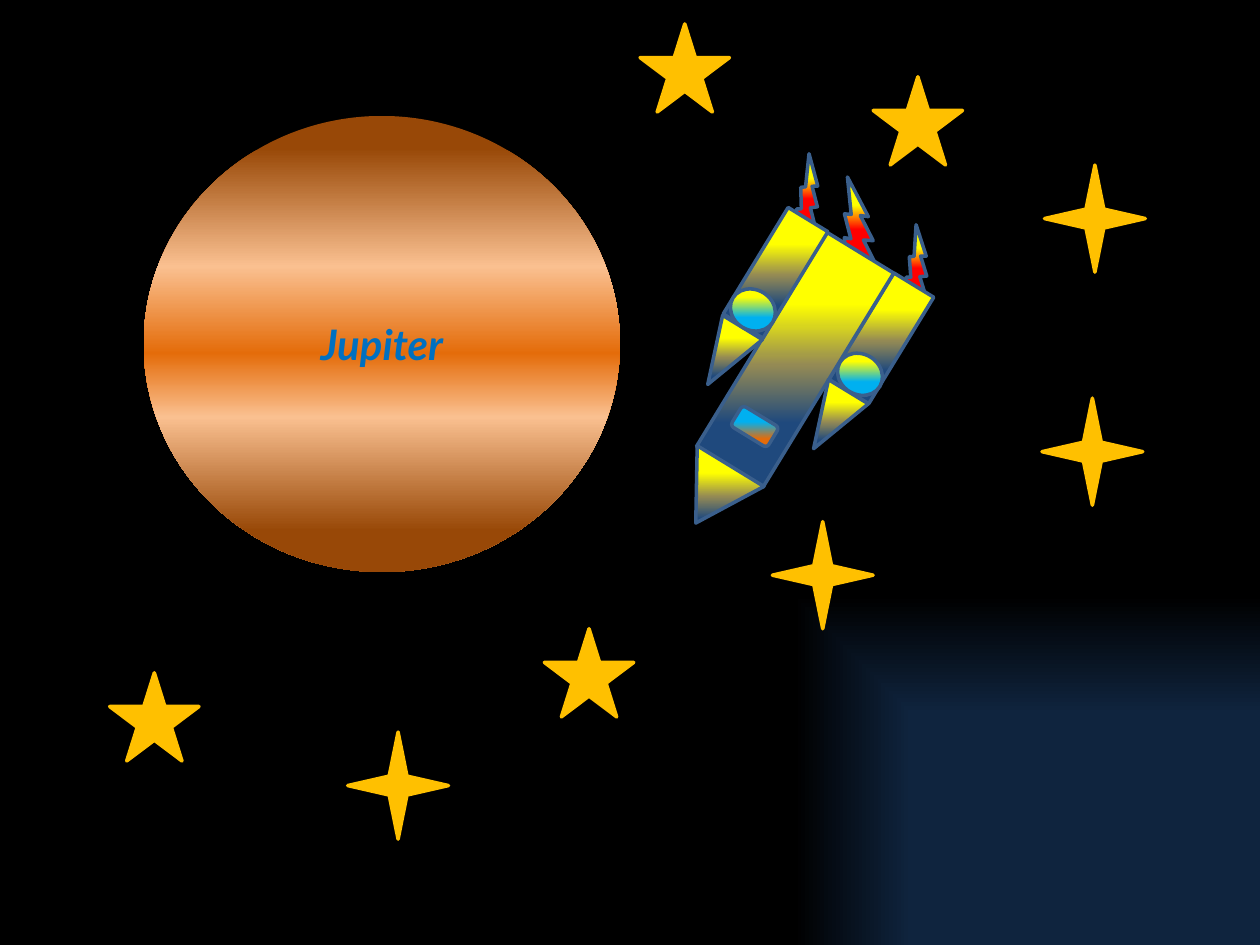
from dataclasses import dataclass
from typing import Any, NamedTuple

from lxml import etree
from pptx import Presentation
from pptx.dml.color import RGBColor
from pptx.enum.shapes import MSO_SHAPE
from pptx.enum.text import MSO_ANCHOR, PP_ALIGN
from pptx.oxml.ns import qn
from pptx.util import Inches, Pt

BOLT = MSO_SHAPE.LIGHTNING_BOLT
RECTANGLE = MSO_SHAPE.RECTANGLE
TRIANGLE = MSO_SHAPE.ISOSCELES_TRIANGLE
ROUNDED = MSO_SHAPE.ROUNDED_RECTANGLE
ELLIPSE = MSO_SHAPE.OVAL
STAR_5 = MSO_SHAPE.STAR_5_POINT
STAR_4 = MSO_SHAPE.STAR_4_POINT
MIDDLE = MSO_ANCHOR.MIDDLE
CENTER = PP_ALIGN.CENTER

Stops = tuple[tuple[int, str], ...]


@dataclass(frozen=True)
class Theme:
    font: str = "Lato"
    label_size: int = 24
    label: str = "0070C0"
    star: str = "FFC000"
    outline: str = "3A5F8C"
    line_width: int = 2
    sky: Stops = ((49, "0F243E"), (74, "000000"))
    planet: Stops = ((7, "984807"), (33, "FAC090"), (52, "E46C0A"),
                     (66, "FAC090"), (91, "984807"))
    flame: Stops = ((28, "FFFF00"), (52, "FF0000"))
    hull: Stops = ((28, "FFFF00"), (52, "948A54"), (75, "1F497D"))
    window: Stops = ((39, "00B0F0"), (79, "E46C0A"))
    porthole: Stops = ((28, "FFFF00"), (63, "00B0F0"))


class Part(NamedTuple):
    kind: Any
    left: float
    top: float
    width: float
    height: float
    fill: Stops | str


THEME = Theme()
ROCKET_ANGLE = 211.4

PLANET = Part(ELLIPSE, 1.14, 0.92, 3.78, 3.62, THEME.planet)

# Rocket from back to front: flames, bodies, noses, windows
ROCKET = (
    Part(BOLT, 6.24, 1.27, 0.36, 0.59, THEME.flame),
    Part(BOLT, 6.53, 1.51, 0.57, 0.59, THEME.flame),
    Part(BOLT, 7.1, 1.84, 0.37, 0.55, THEME.flame),
    Part(RECTANGLE, 6.81, 2.19, 0.37, 0.99, THEME.hull),
    Part(RECTANGLE, 6, 1.86, 0.62, 1.99, THEME.hull),
    Part(RECTANGLE, 5.97, 1.67, 0.37, 0.99, THEME.hull),
    Part(TRIANGLE, 5.35, 3.66, 0.62, 0.53, THEME.hull),
    Part(TRIANGLE, 6.41, 3.07, 0.37, 0.53, THEME.hull),
    Part(TRIANGLE, 5.57, 2.56, 0.37, 0.53, THEME.hull),
    Part(ROUNDED, 5.82, 3.29, 0.34, 0.19, THEME.window),
    Part(ELLIPSE, 5.79, 2.3, 0.37, 0.32, THEME.porthole),
    Part(ELLIPSE, 6.64, 2.81, 0.37, 0.32, THEME.porthole),
)

# Each star kind has one size and several places
STARS = (
    (STAR_5, 0.71, 0.7, ((6.93, 0.61), (4.32, 4.99), (0.87, 5.34), (5.08, 0.19))),
    (STAR_4, 0.8, 0.85, ((2.76, 5.81), (8.29, 1.31), (6.13, 4.14), (8.27, 3.16))),
)


def set_gradient(fill: Any, owner: Any, stops: Stops, to_corner: bool = False) -> None:
    """Fill with stops from top to bottom of the page, or out from the lower right corner."""
    fill.gradient()
    gradient = owner.find(".//" + qn("a:gradFill"))
    for child in list(gradient):
        gradient.remove(child)
    gradient.set("rotWithShape", "0")
    stop_list = etree.SubElement(gradient, qn("a:gsLst"))
    for position, color in stops:
        stop = etree.SubElement(stop_list, qn("a:gs"), pos=str(position * 1000))
        etree.SubElement(stop, qn("a:srgbClr"), val=color)
    if to_corner:
        shade = etree.SubElement(gradient, qn("a:path"))
        shade.set("path", "rect")
        etree.SubElement(shade, qn("a:fillToRect"), l="100000", t="100000")
    else:
        etree.SubElement(gradient, qn("a:lin"), ang="5400000", scaled="0")


def draw_part(shapes: Any, part: Part, outline: str | None = None,
              rotation: float = 0) -> Any:
    shape = shapes.add_shape(part.kind, Inches(part.left), Inches(part.top),
                             Inches(part.width), Inches(part.height))
    shape.shadow.inherit = False
    shape.rotation = rotation
    if isinstance(part.fill, str):
        shape.fill.solid()
        shape.fill.fore_color.rgb = RGBColor.from_string(part.fill)
    else:
        set_gradient(shape.fill, shape.element.spPr, part.fill)
    if outline:
        shape.line.color.rgb = RGBColor.from_string(outline)
        shape.line.width = Pt(THEME.line_width)
    else:
        shape.line.fill.background()
    return shape


def write_text(shape: Any, text: str, *, size: int, color: str,
               bold: bool = False, italic: bool = False) -> None:
    frame = shape.text_frame
    frame.vertical_anchor = MIDDLE
    paragraph = frame.paragraphs[0]
    paragraph.alignment = CENTER
    run = paragraph.add_run()
    run.text = text
    run.font.name = THEME.font
    run.font.size = Pt(size)
    run.font.bold = bold
    run.font.italic = italic
    run.font.color.rgb = RGBColor.from_string(color)


def main() -> None:
    presentation = Presentation()
    presentation.slide_width = Inches(10)
    presentation.slide_height = Inches(7.5)
    slide = presentation.slides.add_slide(presentation.slide_layouts[6])

    # Night sky
    set_gradient(slide.background.fill, slide.element, THEME.sky, to_corner=True)

    # Planet
    planet = draw_part(slide.shapes, PLANET)
    write_text(planet, "Jupiter", size=THEME.label_size, color=THEME.label,
               bold=True, italic=True)

    # Rocket
    rocket = slide.shapes.add_group_shape()
    for part in ROCKET:
        draw_part(rocket.shapes, part, THEME.outline, ROCKET_ANGLE)

    # Stars
    stars = slide.shapes.add_group_shape()
    for kind, width, height, places in STARS:
        for left, top in places:
            star = Part(kind, left, top, width, height, THEME.star)
            draw_part(stars.shapes, star, THEME.star)

    presentation.save("out.pptx")


if __name__ == "__main__":
    main()
